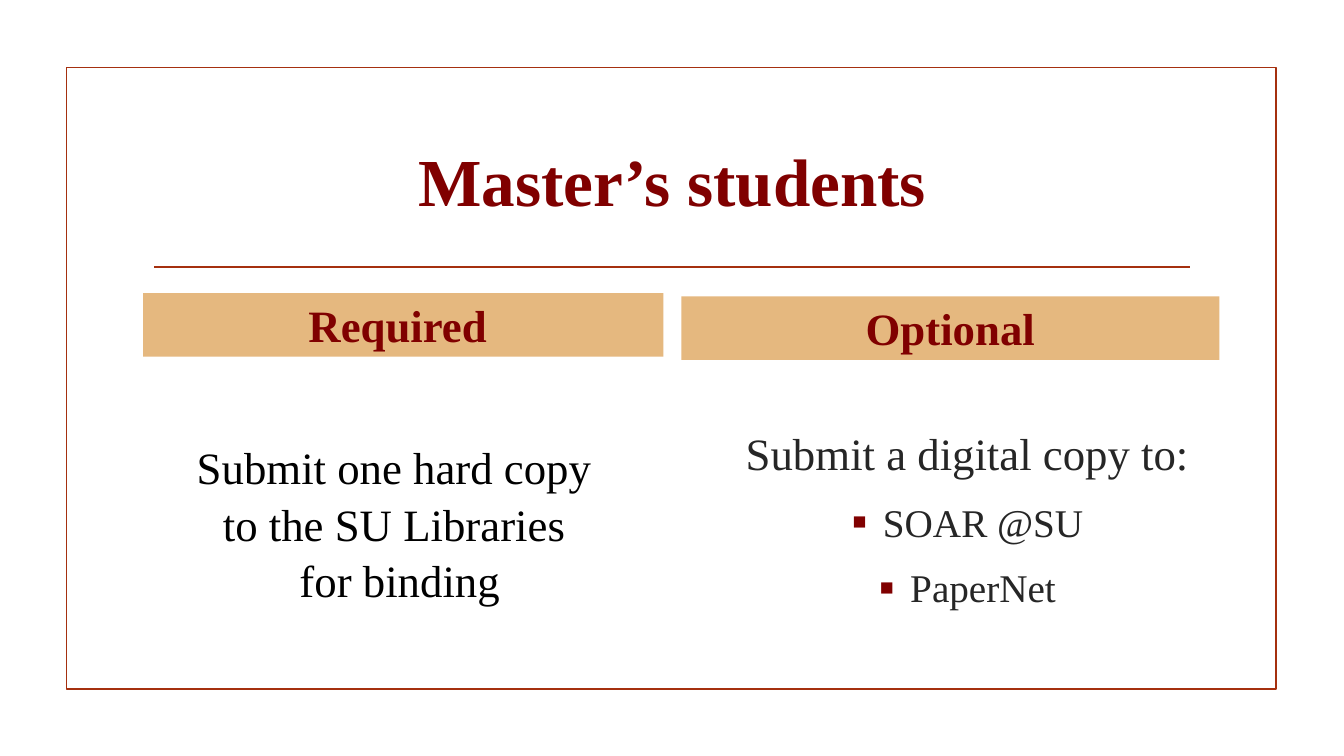
from lxml.etree import SubElement
from pptx import Presentation
from pptx.dml.color import RGBColor
from pptx.enum.shapes import MSO_CONNECTOR, MSO_SHAPE
from pptx.enum.text import MSO_ANCHOR as Anchor, PP_ALIGN as Align
from pptx.oxml.ns import qn
from pptx.util import Cm, Pt

COLORS = {"rust": "A5300F", "maroon": "800000", "tan": "E5B87F",
          "black": "000000", "charcoal": "262626"}
FONT = "Times New Roman"
INDENT = Cm(0.79)


def color(name):
    """Return the named colour."""
    return RGBColor.from_string(COLORS[name])


def write(paragraph, lines, size, ink, bold=False):
    """Write centred lines, parted by line breaks, into a paragraph."""
    paragraph.alignment = Align.CENTER
    for number, line in enumerate(lines):
        if number:
            paragraph.add_line_break()
        run = paragraph.add_run()
        run.text = line
        run.font.name, run.font.size, run.font.bold = FONT, Pt(size), bold
        run.font.color.rgb = color(ink)


def add_bullet(paragraph):
    """Give a paragraph a hanging maroon square bullet."""
    props = paragraph._p.get_or_add_pPr()
    props.set("marL", str(INDENT))
    props.set("indent", str(-INDENT))
    SubElement(SubElement(props, qn("a:buClr")), qn("a:srgbClr"), val=COLORS["maroon"])
    SubElement(props, qn("a:buSzPct"), val="115000")
    SubElement(props, qn("a:buFont"), typeface=FONT)
    SubElement(props, qn("a:buChar"), char="▪")


def add_frame(slide, left, top, width, height):
    """Draw the border and the rule below the title."""
    border = slide.shapes.add_shape(
        MSO_SHAPE.RECTANGLE, Cm(left), Cm(top), Cm(width), Cm(height))
    border.shadow.inherit = False
    border.fill.background()
    rule_y = Cm(top + 5.03)
    rule = slide.shapes.add_connector(
        MSO_CONNECTOR.STRAIGHT, Cm(left + 2.21), rule_y, Cm(left + width - 2.16), rule_y)
    SubElement(rule._element.spPr, qn("a:effectLst"))
    for outline in (border.line, rule.line):
        outline.color.rgb = color("rust")
        outline.width = Pt(1.25)


def add_title(slide, left, top, width, height, text):
    """Place the slide title."""
    title = slide.shapes.add_textbox(Cm(left), Cm(top), Cm(width), Cm(height)).text_frame
    title.word_wrap = True
    title.vertical_anchor = Anchor.MIDDLE
    write(title.paragraphs[0], [text], 48, "maroon", True)


def add_heading(slide, left, top, width, height, text):
    """Place a tan column heading."""
    band = slide.shapes.add_shape(
        MSO_SHAPE.RECTANGLE, Cm(left), Cm(top), Cm(width), Cm(height))
    band.shadow.inherit = False
    band.fill.solid()
    band.fill.fore_color.rgb = color("tan")
    band.line.fill.background()
    heading = band.text_frame
    heading.word_wrap = True
    heading.vertical_anchor = Anchor.BOTTOM
    write(heading.paragraphs[0], [text], 32, "maroon", True)


def add_body(slide, left, top, width, height, inset, lines, ink, bullets=()):
    """Place a column's statement and its bullets, starting at the inset."""
    body = slide.shapes.add_textbox(Cm(left), Cm(top), Cm(width), Cm(height)).text_frame
    body.word_wrap = True
    body.margin_top = Cm(inset)
    statement = body.paragraphs[0]
    write(statement, lines, 32, ink)
    for bullet in bullets:
        item = body.add_paragraph()
        add_bullet(item)
        item.space_before = Pt(5.6)
        write(item, [bullet], 28, ink)
    for paragraph in body.paragraphs:
        paragraph.line_spacing = 1.05
        paragraph.space_after = Pt(6)


def main():
    """Build the slide and save it."""
    deck = Presentation()
    deck.slide_width, deck.slide_height = Cm(33.87), Cm(19.05)
    slide = deck.slides.add_slide(deck.slide_layouts[6])
    add_frame(slide, 1.68, 1.7, 30.48, 15.67)
    add_title(slide, 3.61, 2.72, 26.67, 3.63, "Master’s students")
    add_heading(slide, 3.61, 7.39, 13.11, 1.6, "Required ")
    add_body(slide, 3.05, 9.02, 14.05, 7.32, 2,
             ["Submit one hard copy ", "to the SU Libraries ", "for binding"], "black")
    add_heading(slide, 17.17, 7.47, 13.56, 1.6, "Optional")
    add_body(slide, 16.99, 9.02, 14.78, 7.32, 1.64,
             ["Submit a digital copy to:"], "charcoal", ["SOAR @SU", "PaperNet"])
    deck.save("out.pptx")


if __name__ == "__main__":
    main()
